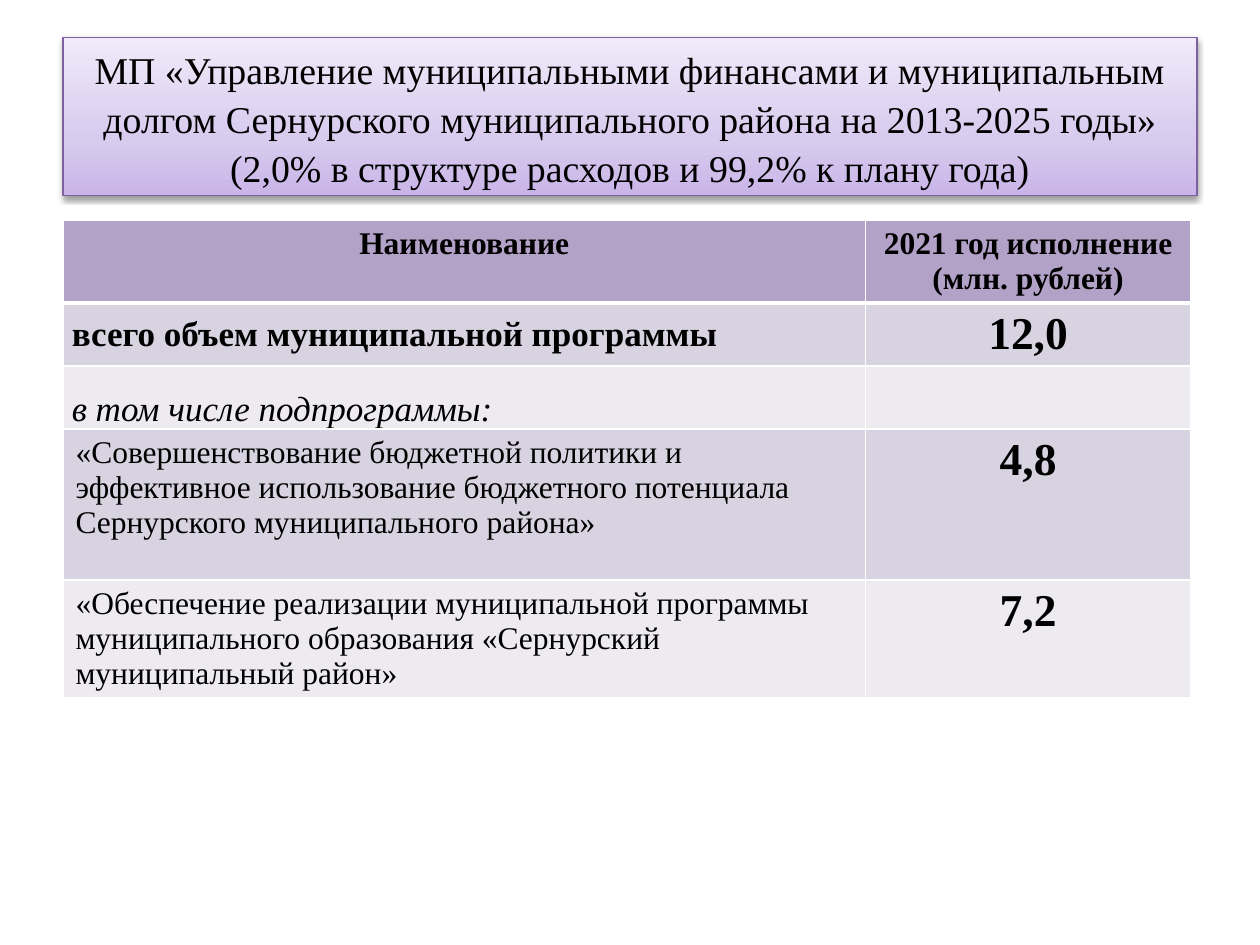
from pptx import Presentation
from pptx.dml.color import RGBColor
from pptx.enum.text import MSO_ANCHOR, MSO_AUTO_SIZE, PP_ALIGN
from pptx.oxml import parse_xml
from pptx.oxml.ns import nsdecls
from pptx.util import Inches, Pt

LEFT, MID = PP_ALIGN.LEFT, PP_ALIGN.CENTER
TOP, CENTRE, LOW = MSO_ANCHOR.TOP, MSO_ANCHOR.MIDDLE, MSO_ANCHOR.BOTTOM
FIXED = MSO_AUTO_SIZE.NONE
TITLE_ONLY = 5
WIDE, HIGH = 10, 7.5

HEAD, DARK, PALE = "B3A2C7", "D8D3E0", "EDEAF0"
STOPS = [(0, "C9B5E8"), (35, "D8CBEE"), (100, "F0EAF9")]


def color(code):
    return RGBColor.from_string(code)


def write(frame, text, size=18, bold=False, italic=False, align=LEFT,
          space=1.0, font="Times New Roman", ink="000000"):
    frame.word_wrap = True
    par = frame.paragraphs[0]
    par.alignment, par.line_spacing = align, space
    run = par.add_run()
    run.text = text
    run.font.name, run.font.size = font, Pt(size)
    run.font.bold, run.font.italic = bold, italic
    run.font.color.rgb = color(ink)


def xml(tag, body):
    """Parse one drawing element, given its tag with attributes and its content."""
    name = tag.split()[0]
    return parse_xml(f"<a:{tag} {nsdecls('a')}>{body}</a:{name}>")


def solid(code):
    return f'<a:solidFill><a:srgbClr val="{code}"/></a:solidFill>'


class Page:
    """Holds the slide and draws its parts; places are shares of the slide."""

    def __init__(self, deck):
        self.slide = deck.slides.add_slide(deck.slide_layouts[TITLE_ONLY])

    def scale(self, x, y, w, h):
        return [Inches(v * s) for v, s in zip((x, y, w, h), (WIDE, HIGH) * 2)]

    def title(self, text, box):
        shape = self.slide.shapes.title
        shape.left, shape.top, shape.width, shape.height = self.scale(*box)
        props = shape.element.spPr
        stops = "".join(
            f'<a:gs pos="{pos * 1000}"><a:srgbClr val="{code}"/></a:gs>'
            for pos, code in STOPS)
        props.append(xml("gradFill", f'<a:gsLst>{stops}</a:gsLst>'
                                     '<a:lin ang="16200000" scaled="0"/>'))
        shape.line.color.rgb = color("7D60A0")
        shape.line.width = Pt(0.75)
        props.append(xml("effectLst",
                         '<a:outerShdw blurRad="40000" dist="20000" dir="5400000" '
                         'rotWithShape="0"><a:srgbClr val="000000">'
                         '<a:alpha val="38000"/></a:srgbClr></a:outerShdw>'))
        frame = shape.text_frame
        frame.auto_size, frame.vertical_anchor = FIXED, CENTRE
        write(frame, text, size=21.6, align=MID, space=1.08)

    def table(self, rows, box, cols, highs):
        """Draw rows of (text, format) cells; cols and highs share out the box."""
        x, y, w, h = self.scale(*box)
        grid = self.slide.shapes.add_table(len(rows), len(cols), x, y, w, h).table
        for col, part in zip(grid.columns, cols):
            col.width = int(w * part / sum(cols))
        for row, part in zip(grid.rows, highs):
            row.height = int(h * part / sum(highs))
        for i, row in enumerate(rows):
            fill = HEAD if i == 0 else (PALE, DARK)[i % 2]
            for j, (text, style) in enumerate(row):
                edges = {"L": 1, "R": 1, "T": 3 if i == 1 else 1,
                         "B": 3 if i == 0 else 1}
                self.cell(grid.cell(i, j), text, fill, edges, **style)

    def cell(self, cell, text, fill, edges, anchor=TOP, tight=False, **style):
        props = cell._tc.get_or_add_tcPr()
        for side, width in edges.items():
            props.append(xml(f'ln{side} w="{Pt(width)}"', solid("FFFFFF")))
        cell.fill.solid()
        cell.fill.fore_color.rgb = color(fill)
        cell.vertical_anchor = anchor
        if tight:
            cell.margin_left = cell.margin_right = Inches(0.07)
            cell.margin_top = cell.margin_bottom = 0
        if text:
            write(cell.text_frame, text, **style)


def main():
    deck = Presentation()
    deck.slide_width, deck.slide_height = Inches(WIDE), Inches(HIGH)
    page = Page(deck)
    page.title("МП «Управление муниципальными финансами и муниципальным долгом "
               "Сернурского муниципального района на 2013-2025 годы» "
               "(2,0% в структуре расходов и 99,2% к плану года)",
               (0.05, 0.04, 0.9, 1.25 / HIGH))

    top = dict(bold=True, align=MID)
    value = dict(size=26, bold=True, align=MID)
    total = dict(size=20, bold=True, anchor=CENTRE, tight=True)
    note = dict(size=20, italic=True, anchor=LOW, tight=True)
    rows = [
        [("Наименование", top), ("2021 год исполнение (млн. рублей)", top)],
        [("всего объем муниципальной программы", total), ("12,0", value)],
        [("в том числе подпрограммы:", note), ("", {})],
        [("«Совершенствование бюджетной политики и эффективное использование "
          "бюджетного потенциала Сернурского муниципального района»", {}),
         ("4,8", value)],
        [("«Обеспечение реализации муниципальной программы муниципального "
          "образования «Сернурский муниципальный район»", {}), ("7,2", value)],
    ]
    highs = [0.65, 0.5, 0.5, 1.2, 0.93]
    page.table(rows, (0.05, 1.75 / HIGH, 0.895, sum(highs) / HIGH),
               [6.37, 2.58], highs)
    deck.save("out.pptx")


if __name__ == "__main__":
    main()
